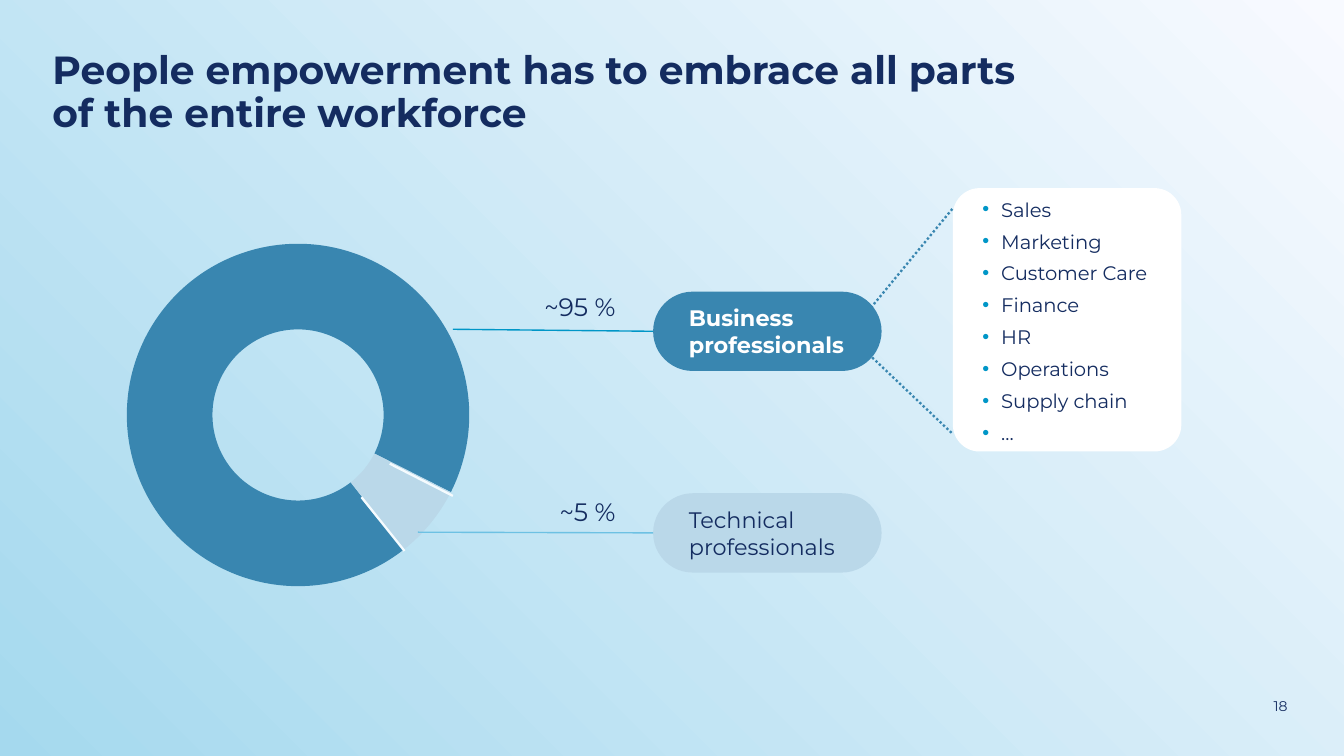
from lxml import etree
from pptx import Presentation
from pptx.chart.data import CategoryChartData
from pptx.dml.color import RGBColor
from pptx.enum.chart import XL_CHART_TYPE
from pptx.enum.dml import MSO_LINE
from pptx.enum.shapes import MSO_CONNECTOR, MSO_SHAPE
from pptx.enum.text import MSO_ANCHOR, PP_ALIGN
from pptx.oxml import parse_xml
from pptx.oxml.ns import nsdecls, qn
from pptx.util import Inches, Pt

FONT = "Montserrat"
NAVY = RGBColor(0x14, 0x2C, 0x60)
WHITE = RGBColor(0xFF, 0xFF, 0xFF)
OFF_WHITE = RGBColor(0xF5, 0xFB, 0xFE)
BLUE = RGBColor(0x39, 0x86, 0xB0)
SKY = RGBColor(0x85, 0xBB, 0xD8)
PALE = RGBColor(0xBA, 0xD8, 0xE9)
CYAN = RGBColor(0x00, 0x96, 0xC7)
LIGHT_CYAN = RGBColor(0x6D, 0xC1, 0xE3)
BACK_START = RGBColor(0xA5, 0xD9, 0xEE)
BACK_END = RGBColor(0xF8, 0xFA, 0xFF)


def add_bullet(paragraph, color):
    props = paragraph._p.get_or_add_pPr()
    props.set("marL", str(Inches(0.14)))
    props.set("indent", str(-Inches(0.14)))
    bullet_color = etree.SubElement(props, qn("a:buClr"))
    etree.SubElement(bullet_color, qn("a:srgbClr")).set("val", str(color))
    etree.SubElement(props, qn("a:buFont")).set("typeface", "Arial")
    etree.SubElement(props, qn("a:buChar")).set("char", "•")


def write_text(frame, paragraphs, size, color=NAVY, bold=False, align=PP_ALIGN.LEFT,
               anchor=MSO_ANCHOR.TOP, insets=(0, 0, 0, 0), wrap=True,
               line_spacing=None, gap=0, bullet=None):
    frame.word_wrap = wrap
    frame.vertical_anchor = anchor
    (frame.margin_left, frame.margin_top,
     frame.margin_right, frame.margin_bottom) = [Inches(inset) for inset in insets]
    for i, words in enumerate(paragraphs):
        paragraph = frame.add_paragraph() if i else frame.paragraphs[0]
        paragraph.text = words
        paragraph.alignment = align
        if line_spacing:
            paragraph.line_spacing = line_spacing
        if i and gap:
            paragraph.space_before = Pt(gap)
        if bullet:
            add_bullet(paragraph, bullet)
        for run in paragraph.runs:
            run.font.name, run.font.size = FONT, Pt(size)
            run.font.bold, run.font.color.rgb = bold, color


def add_text(slide, box, paragraphs, size, **text_format):
    text_box = slide.shapes.add_textbox(*[Inches(n) for n in box])
    write_text(text_box.text_frame, paragraphs, size, **text_format)


def add_rounded(slide, box, fill, rounding):
    panel = slide.shapes.add_shape(MSO_SHAPE.ROUNDED_RECTANGLE, *[Inches(n) for n in box])
    panel.adjustments[0] = rounding
    panel.shadow.inherit = False
    panel.fill.solid()
    panel.fill.fore_color.rgb = fill
    panel.line.fill.background()
    return panel


def add_line(slide, start, end, color, width, dash=None):
    line = slide.shapes.add_connector(
        MSO_CONNECTOR.STRAIGHT, *[Inches(n) for n in (*start, *end)])
    line.line.color.rgb = color
    line.line.width = Pt(width)
    if dash:
        line.line.dash_style = dash
    etree.SubElement(line._element.spPr, qn("a:effectLst"))
    return line


def draw_frame(slide):
    # Background, title and page number
    fill = slide.background.fill
    fill.gradient()
    fill.gradient_angle = 45
    for stop, position, color in zip(fill.gradient_stops, (0, 1), (BACK_START, BACK_END)):
        stop.position = position
        stop.color.rgb = color
    add_text(slide, (0.39, 0.38, 7.83, 0.64),
             ["People empowerment has to embrace all parts\vof the entire workforce"],
             21, bold=True, line_spacing=0.9)
    add_text(slide, (8.93, 5.19, 0.65, 0.13), ["18"], 7.5,
             align=PP_ALIGN.RIGHT, anchor=MSO_ANCHOR.MIDDLE)


def draw_workforce_ring(slide, left, top, width, height):
    data = CategoryChartData()
    data.categories = ["1", "2", "3", "4"]
    data.add_series("Series 1", (93, None, 7, None))
    chart = slide.shapes.add_chart(
        XL_CHART_TYPE.DOUGHNUT, *[Inches(n) for n in (left, top, width, height)], data).chart
    chart.has_legend = False
    chart.has_title = False
    chart.font.name, chart.font.size, chart.font.color.rgb = FONT, Pt(10), NAVY
    plot = chart.plots[0]
    plot.vary_by_categories = True
    for i, color in enumerate((BLUE, SKY, PALE, CYAN)):
        slice_format = plot.series[0].points[i].format
        slice_format.fill.solid()
        slice_format.fill.fore_color.rgb = color
        slice_format.line.fill.background()

    # Rotation, hole and a square plot area
    ring = plot._element
    for tag, value in (("c:firstSliceAng", 142), ("c:holeSize", 60)):
        setting = ring.find(qn(tag))
        if setting is None:
            setting = etree.SubElement(ring, qn(tag))
        setting.set("val", str(value))
    diameter = 2.55
    share_w, share_h = diameter / width, diameter / height
    plot_left, plot_top = (1 - share_w) / 2, (1 - share_h) / 2 + 0.01 / height
    plot_area = ring.getparent()
    for layout in plot_area.findall(qn("c:layout")):
        plot_area.remove(layout)
    plot_area.insert(0, parse_xml(
        f'<c:layout {nsdecls("c")}><c:manualLayout><c:layoutTarget val="inner"/>'
        '<c:xMode val="edge"/><c:yMode val="edge"/>'
        f'<c:x val="{plot_left:.3f}"/><c:y val="{plot_top:.3f}"/>'
        f'<c:w val="{share_w:.3f}"/><c:h val="{share_h:.3f}"/>'
        '</c:manualLayout></c:layout>'))


def draw_slice_edges(slide, left, top):
    # Light edges on both sides of the small slice
    for start, end in (((2.8, 1.78), (3.27, 2.02)), ((2.59, 2.03), (2.91, 2.43))):
        add_line(slide, (left + start[0], top + start[1]),
                 (left + end[0], top + end[1]), OFF_WHITE, 1.25)


def draw_group(slide, left, top, name, share, ring_point, fill, line_color,
               label_width, label_rise, color=NAVY, bold=False):
    width, height = 1.7, 0.59
    pill = add_rounded(slide, (left, top, width, height), fill, 0.5)
    write_text(pill.text_frame, [name], 12, color=color, bold=bold,
               anchor=MSO_ANCHOR.MIDDLE, insets=(0.18, 0.05, 0.1, 0.05))
    leader = add_line(slide, ring_point, (left, top + height / 2), line_color, 0.75)
    leader.end_connect(pill, 1)
    add_text(slide, (left - 0.28 - label_width, top + label_rise, label_width, 0.23),
             [share], 13.5, align=PP_ALIGN.RIGHT, wrap=False)


def draw_departments(slide, left, top, width, height):
    add_rounded(slide, (left, top, width, height), WHITE, 0.117)
    add_text(slide, (left + 0.22, top + 0.07, 1.26, 1.9),
             ["Sales", "Marketing", "Customer Care", "Finance", "HR",
              "Operations", "Supply chain", "…"],
             10.5, wrap=False, gap=4.5, bullet=CYAN)
    # Dotted lines fanning out from the business pill
    for start, drop in (((6.48, 2.29), 0.15), ((6.49, 2.66), 1.83)):
        add_line(slide, start, (left, top + drop), BLUE, 1.25, MSO_LINE.ROUND_DOT)


def main():
    deck = Presentation()
    deck.slide_width = Inches(10)
    deck.slide_height = deck.slide_width * 9 // 16
    slide = deck.slides.add_slide(deck.slide_layouts[6])
    draw_frame(slide)
    draw_workforce_ring(slide, 0.1, 1.67, 4.24, 2.82)
    draw_group(slide, 4.86, 2.17, "Business professionals", "~95 %", (3.37, 2.45),
               BLUE, CYAN, 0.54, 0, color=WHITE, bold=True)
    draw_group(slide, 4.86, 3.67, "Technical professionals", "~5 %", (3.11, 3.96),
               PALE, LIGHT_CYAN, 0.42, 0.02)
    draw_slice_edges(slide, 0.1, 1.67)
    draw_departments(slide, 7.09, 1.4, 1.7, 1.96)
    deck.save("out.pptx")


if __name__ == "__main__":
    main()
